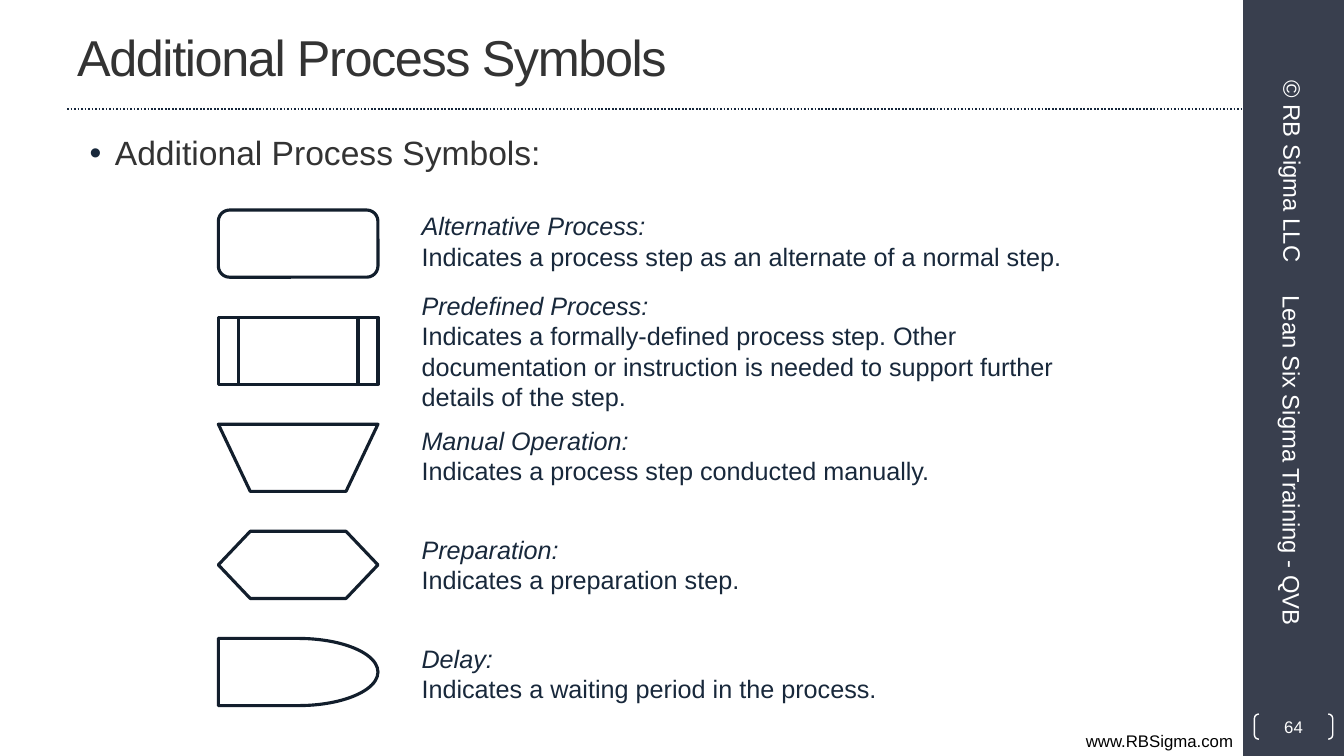
from lxml import etree
from pptx import Presentation
from pptx.dml.color import RGBColor
from pptx.enum import dml, shapes, text
from pptx.oxml import ns
from pptx.util import Pt

FONT = "Arial"
BAR = RGBColor(0x39, 0x3F, 0x4E)
RULE = RGBColor(0x17, 0x27, 0x3B)
OUTLINE = RGBColor(0x12, 0x1E, 0x2C)
NAVY = RGBColor(0x18, 0x28, 0x3B)
CHARCOAL = RGBColor(0x33, 0x33, 0x33)
BLACK = RGBColor(0, 0, 0)
WHITE = RGBColor(0xFF, 0xFF, 0xFF)

KIND = shapes.MSO_SHAPE
ALIGN = text.PP_ALIGN
MIDDLE = text.MSO_ANCHOR.MIDDLE

SYMBOL_TOP, SYMBOL_PITCH = 150, 76.5

# Symbol, name, meaning, top and height of the description
SYMBOLS = [
    (KIND.FLOWCHART_ALTERNATE_PROCESS, "Alternative Process:",
     "Indicates a process step as an alternate of a normal step.", 147, 51),
    (KIND.FLOWCHART_PREDEFINED_PROCESS, "Predefined Process:",
     "Indicates a formally-defined process step. Other documentation or "
     "instruction is needed to support further details of the step.", 204, 94.5),
    (KIND.FLOWCHART_MANUAL_OPERATION, "Manual Operation:",
     "Indicates a process step conducted manually.", 300, 51),
    (KIND.FLOWCHART_PREPARATION, "Preparation:",
     "Indicates a preparation step.", 378, 51),
    (KIND.FLOWCHART_DELAY, "Delay:",
     "Indicates a waiting period in the process.", 456, 51),
]


def style(para, size, color, italic=False):
    for span in para.runs:
        span.font.name = FONT
        span.font.size = Pt(size)
        span.font.color.rgb = color
        span.font.italic = italic


def add_text(page, area, wording, size, color, align=ALIGN.LEFT, anchor=text.MSO_ANCHOR.TOP):
    box = page.shapes.add_textbox(*map(Pt, area))
    frame = box.text_frame
    frame.word_wrap = True
    frame.vertical_anchor = anchor
    frame.text = wording
    for para in frame.paragraphs:
        para.alignment = align
        style(para, size, color)
    return box


def add_outline(page, kind, area, color, width):
    shape = page.shapes.add_shape(kind, *map(Pt, area))
    shape.shadow.inherit = False
    shape.fill.background()
    shape.line.color.rgb = color
    shape.line.width = Pt(width)
    return shape


def add_side_bar(page):
    bar = page.shapes.add_shape(KIND.RECTANGLE, Pt(888), Pt(0), Pt(72), Pt(540))
    bar.shadow.inherit = False
    bar.fill.solid()
    bar.fill.fore_color.rgb = BAR
    bar.line.fill.background()
    course = add_text(page, (782, 326, 282, 38), "Lean Six Sigma Training - QVB",
                      17, WHITE, anchor=MIDDLE)
    owner = add_text(page, (842.5, 103.5, 162, 38), "© RB Sigma LLC",
                     17, WHITE, ALIGN.CENTER, MIDDLE)
    for box in (course, owner):
        box.rotation = 90


def add_page_number(page):
    bracket = add_outline(page, KIND.DOUBLE_BRACKET, (896, 510, 56, 18), WHITE, 1)
    bracket.adjustments[0] = 0.179
    frame = bracket.text_frame
    frame.margin_left = frame.margin_right = frame.margin_top = frame.margin_bottom = 0
    frame.vertical_anchor = MIDDLE
    frame.text = "64"
    frame.paragraphs[0].alignment = ALIGN.CENTER
    style(frame.paragraphs[0], 12, WHITE)


def add_title(page):
    title = add_text(page, (48, 2, 800, 76), "Additional Process Symbols",
                     36, CHARCOAL, anchor=MIDDLE)
    title.text_frame.paragraphs[0].runs[0].font._element.set("spc", "-100")
    rule = page.shapes.add_connector(shapes.MSO_CONNECTOR.STRAIGHT,
                                     Pt(48), Pt(78), Pt(888), Pt(78))
    rule.line.color.rgb = RULE
    rule.line.width = Pt(1.25)
    rule.line.dash_style = dml.MSO_LINE.ROUND_DOT
    etree.SubElement(rule._element.spPr, ns.qn("a:effectLst"))


def add_bullet(page):
    box = add_text(page, (48, 91, 800, 40), "Additional Process Symbols:", 24, CHARCOAL)
    props = box.text_frame.paragraphs[0]._p.get_or_add_pPr()
    props.set("marL", str(Pt(27)))
    props.set("indent", str(-Pt(18)))
    color = etree.SubElement(props, ns.qn("a:buClr"))
    etree.SubElement(color, ns.qn("a:srgbClr"), val=str(NAVY))
    etree.SubElement(props, ns.qn("a:buFont"), typeface=FONT)
    etree.SubElement(props, ns.qn("a:buChar"), char="•")


def add_symbols(page):
    for row, (kind, name, meaning, top, height) in enumerate(SYMBOLS):
        add_outline(page, kind, (156, SYMBOL_TOP + row * SYMBOL_PITCH, 114, 48),
                    OUTLINE, 2.25)
        box = add_text(page, (294, top, 480, height), f"{name}\n{meaning}", 18, NAVY)
        style(box.text_frame.paragraphs[0], 18, NAVY, italic=True)


def main():
    deck = Presentation()
    deck.slide_width, deck.slide_height = Pt(960), Pt(540)
    page = deck.slides.add_slide(deck.slide_layouts[6])
    add_side_bar(page)
    add_title(page)
    add_bullet(page)
    add_symbols(page)
    add_text(page, (0, 518.5, 888, 21.5), "www.RBSigma.com", 12, BLACK, ALIGN.RIGHT)
    add_page_number(page)
    deck.save("out.pptx")


if __name__ == "__main__":
    main()
